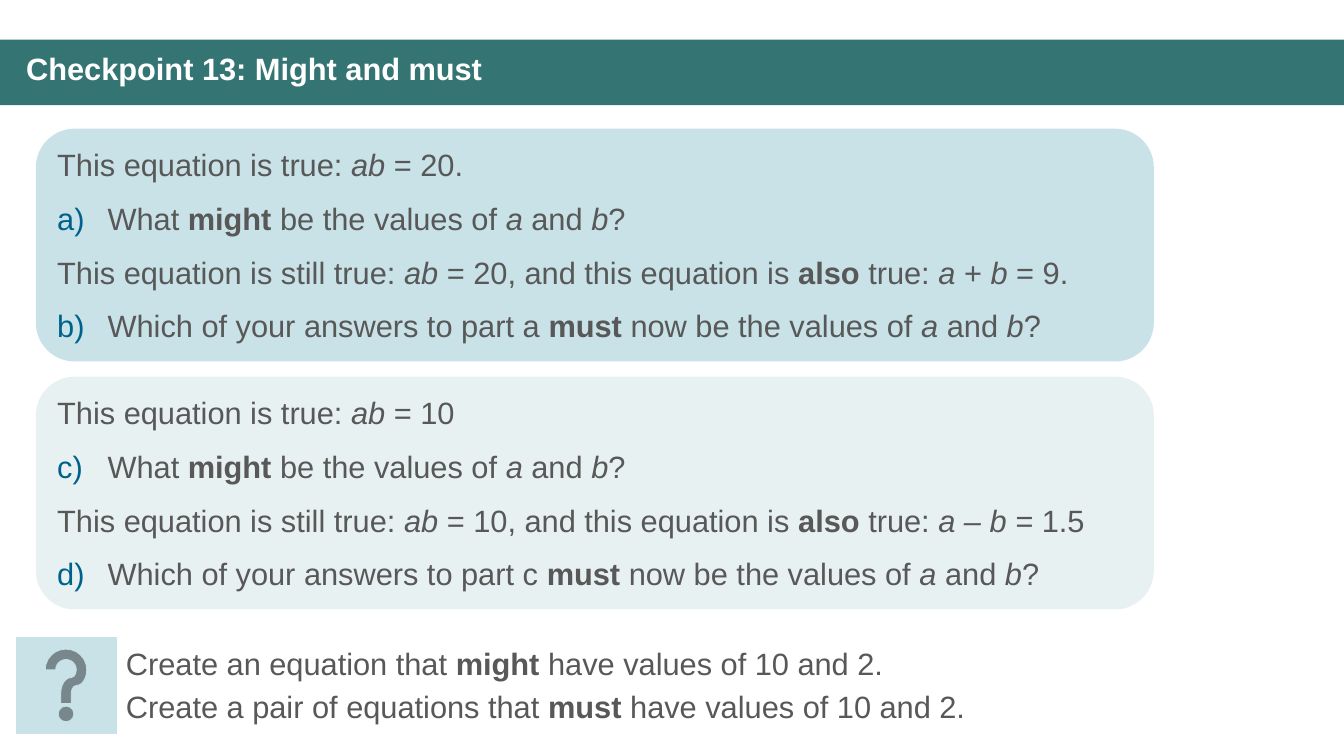
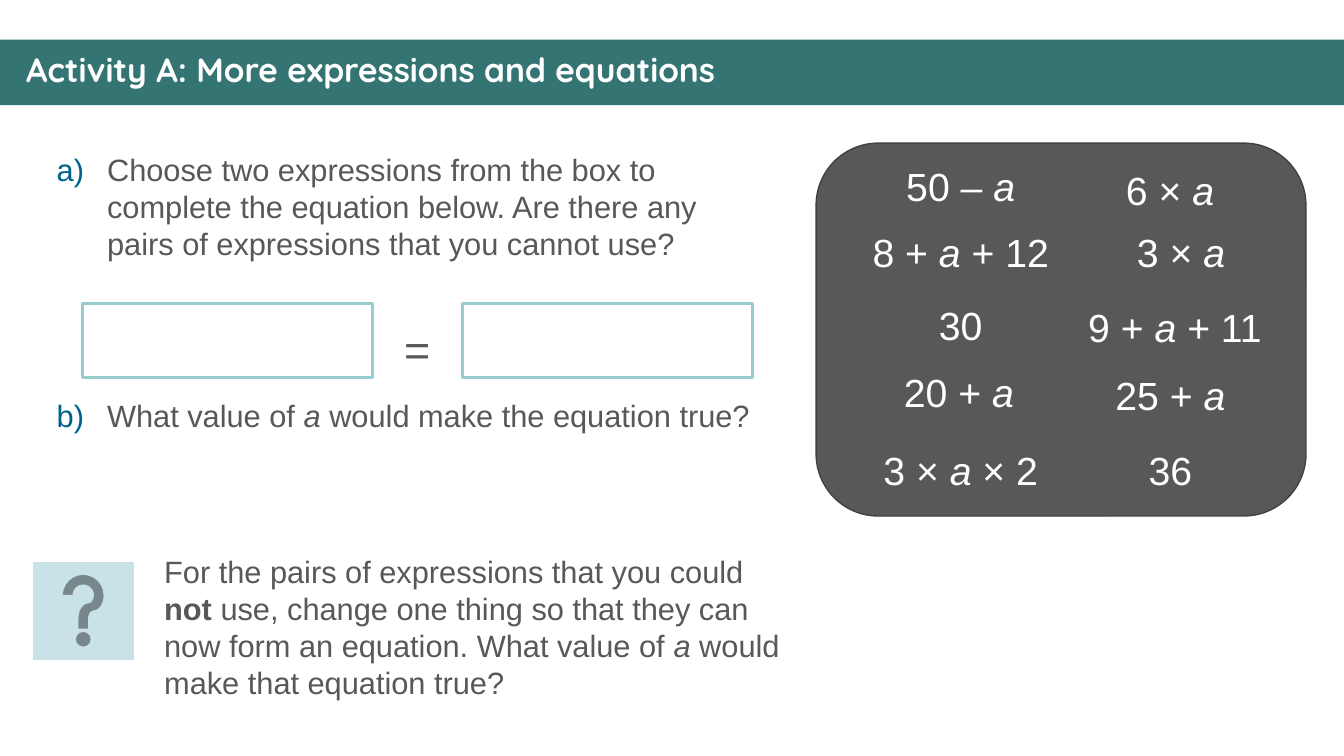
from lxml.etree import SubElement
from pptx import Presentation
from pptx.dml.color import RGBColor
from pptx.enum.shapes import MSO_SHAPE
from pptx.enum.text import MSO_ANCHOR, MSO_AUTO_SIZE, PP_ALIGN
from pptx.oxml.ns import qn
from pptx.util import Inches, Pt

COLORS = {
    "white": "FFFFFF",
    "band": "347574",
    "text": "585858",
    "bullet": "00628C",
    "blue card": "C8E2E8",
    "pale card": "E8F1F1",
    "dark edge": "414141",
    "blank edge": "99CCCC",
}
FONT = "Arial"
BOLD_WORDS = {"might", "must", "also", "not"}
TEXT_GAP = 4.4

deck = Presentation()
deck.slide_width, deck.slide_height = Inches(13.33), Inches(7.5)


def add_box(page, shares, kind=None, fill=None, line=None, line_width=1):
    """Add a shape, or a text box if no kind; shares are percent of the slide."""
    sides = (deck.slide_width, deck.slide_height) * 2
    frame = [int(side * share / 100) for side, share in zip(sides, shares)]
    if kind is None:
        box = page.shapes.add_textbox(*frame)
    else:
        box = page.shapes.add_shape(kind, *frame)
        box.shadow.inherit = False
        box.fill.solid()
        box.fill.fore_color.rgb = RGBColor.from_string(COLORS[fill])
        if line:
            box.line.color.rgb = RGBColor.from_string(COLORS[line])
            box.line.width = Pt(line_width)
        else:
            box.line.fill.background()
    box.text_frame.word_wrap = True
    return box


def write_text(box, lines, size=22, color="text", font=FONT, gap=TEXT_GAP,
               align=PP_ALIGN.LEFT, bold=False):
    """Write (number, text) lines; text between bars is bold or italic."""
    for index, (number, text) in enumerate(lines):
        frame = box.text_frame
        para = frame.add_paragraph() if index else frame.paragraphs[0]
        para.alignment = align
        para.space_before = Pt(gap if index else 0)
        if number:
            properties = para._p.get_or_add_pPr()
            properties.set("marL", str(Inches(0.5)))
            properties.set("indent", str(-Inches(0.5)))
            bullet_color = SubElement(properties, qn("a:buClr"))
            SubElement(bullet_color, qn("a:srgbClr"), val=COLORS["bullet"])
            SubElement(properties, qn("a:buFont"), typeface=FONT)
            SubElement(properties, qn("a:buAutoNum"), type="alphaLcParenR",
                       startAt=str(number))
        for position, words in enumerate(text.split("|")):
            if not words:
                continue
            marked = position % 2 == 1
            span = para.add_run()
            span.text = words
            span.font.name = font
            span.font.size = Pt(size)
            span.font.color.rgb = RGBColor.from_string(COLORS[color])
            span.font.bold = bold or (marked and words in BOLD_WORDS)
            span.font.italic = marked and words not in BOLD_WORDS


# Shared title style
layout = deck.slide_layouts[5]
layout_title = layout.placeholders[0]
layout_title.left = int(deck.slide_width * 0.012)
layout_title.top = int(deck.slide_height * 0.064)
layout_title.width = int(deck.slide_width * 0.978)
layout_title.height = int(deck.slide_height * 0.0627)
layout_title.text_frame.vertical_anchor = MSO_ANCHOR.TOP
layout_title.text_frame.auto_size = MSO_AUTO_SIZE.NONE

# Pages with their bands, titles and question icons
pages = []
for title, font, size, icon_left, icon_top in [
    ("Checkpoint 13: Might and must", FONT, 22, 1.2, 84.27),
    ("Activity A: More expressions and equations", "Quicksand", 24, 2.48, 74.4),
]:
    page = deck.slides.add_slide(layout)
    band = add_box(page, (0, 5.25, 100, 8.67), MSO_SHAPE.RECTANGLE, "band")
    page.shapes.element.insert(2, band.element)  # behind the title
    write_text(page.shapes.title, [(0, title)], size, "white", font, bold=True)
    page.shapes.title.text_frame.paragraphs[0].line_spacing = 0.9
    add_box(page, (icon_left, icon_top, 7.43, 12.8),
            MSO_SHAPE.ACTION_BUTTON_HELP, "blue card", "blue card", 0.5)
    pages.append(page)
checkpoint, activity = pages

# Checkpoint: two cards with the same pattern of questions
CARD_TOP, CARD_HEIGHT, CARD_GAP = 17.02, 30.8, 2
for row, (fill, product, end, part, second) in enumerate([
    ("blue card", 20, ".", "a", "|a |+ |b |= 9."),
    ("pale card", 10, "", "c", "|a – b = |1.5"),
]):
    top = CARD_TOP + row * (CARD_HEIGHT + CARD_GAP)
    card = add_box(checkpoint, (2.67, top, 83.18, CARD_HEIGHT),
                   MSO_SHAPE.ROUNDED_RECTANGLE, fill)
    card.text_frame.vertical_anchor = MSO_ANCHOR.MIDDLE
    write_text(card, [
        (0, f"This equation is true: |ab| = {product}{end}"),
        (2 * row + 1, "What |might| be the values of |a |and |b|?"),
        (0, f"This equation is still true: |ab| = {product}, "
            f"and this equation is |also| true: {second}"),
        (2 * row + 2, f"Which of your answers to part {part} |must| now be "
                      "the values of |a |and| b|?"),
    ], gap=12)

# Checkpoint: further task
write_text(add_box(checkpoint, (8.63, 84.65, 67.58, 12.27)), [
    (0, "Create an equation that |might| have values of 10 and 2."),
    (0, "Create a pair of equations that |must| have values of 10 and 2."),
])

# Activity: questions, with room for the equation between them
write_text(add_box(activity, (3.48, 19.33, 54.08, 39.87)), [
    (1, "Choose two expressions from the box to complete the equation below. "
        "Are there any pairs of expressions that you cannot use?"),
    (2, "What value of |a |would make the equation true?"),
], gap=96)

# Activity: blank equation
for left in (6.12, 34.4):
    add_box(activity, (left, 40.13, 21.6, 9.87), MSO_SHAPE.RECTANGLE,
            "white", "blank edge", 2.25)
equals = add_box(activity, (29.12, 41.2, 3.83, 9.87))
equals.text_frame.vertical_anchor = MSO_ANCHOR.MIDDLE
write_text(equals, [(0, "=")], 32, align=PP_ALIGN.CENTER)

# Activity: box of expressions, each placed by its centre and top
add_box(activity, (60.72, 18.93, 36.45, 49.33),
        MSO_SHAPE.ROUNDED_RECTANGLE, "text", "dark edge")
EXPRESSION_WIDTH = 16
for center, top, expression in [
    (71.48, 20.8, "50 – |a|"), (87.05, 21.33, "6 × |a|"),
    (71.48, 29.6, "8 + |a| + 12"), (87.87, 29.6, "3 × |a|"),
    (71.48, 39.2, "30"), (87.42, 39.47, "9 + |a| + 11"),
    (71.35, 48, "20 + |a|"), (87.08, 48.4, "25 + |a|"),
    (71.48, 58.4, "3 × |a| × 2"), (87.08, 58.4, "36"),
]:
    box = add_box(activity, (center - EXPRESSION_WIDTH / 2, top,
                             EXPRESSION_WIDTH, 7.6))
    write_text(box, [(0, expression)], 28, "white", align=PP_ALIGN.CENTER)

# Activity: further task
write_text(add_box(activity, (11.48, 72.47, 48.3, 21.07)), [
    (0, "For the pairs of expressions that you could |not| use, change one "
        "thing so that they can now form an equation. What value of |a| would "
        "make that equation true?"),
])

deck.save("out.pptx")
